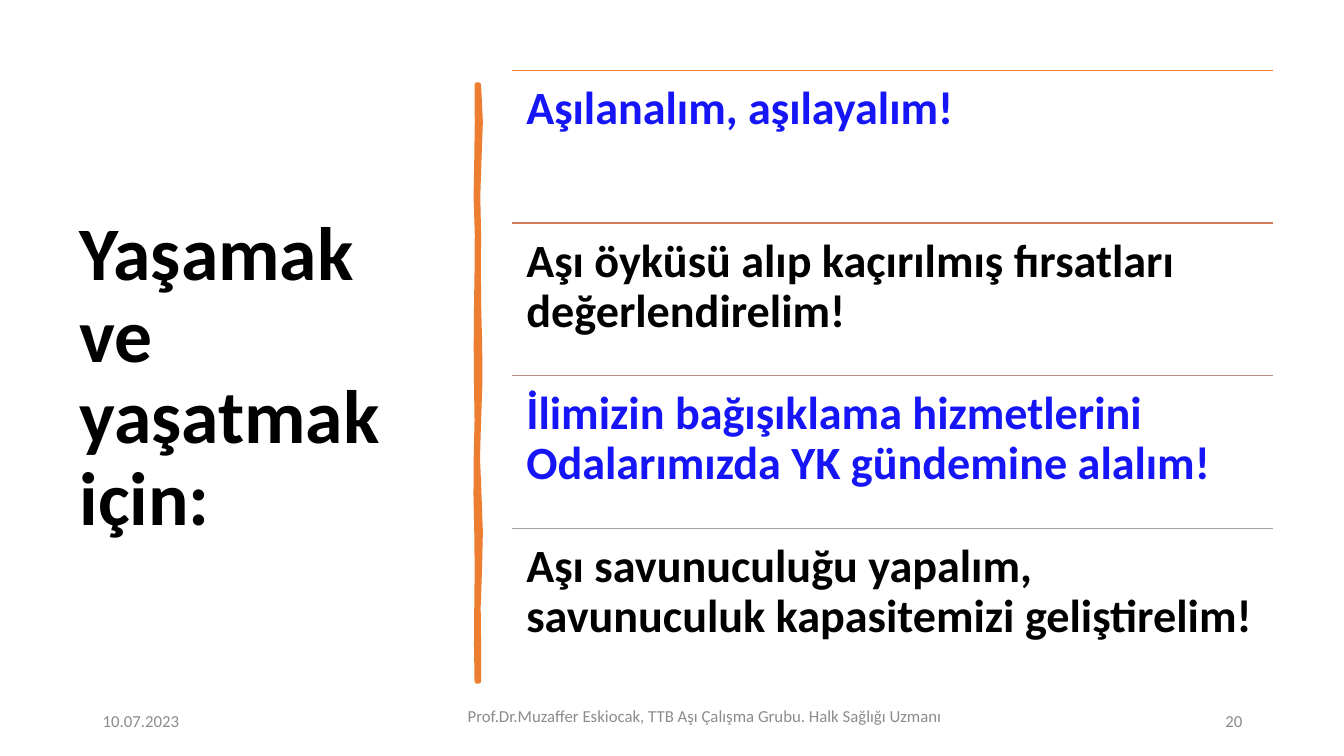
from dataclasses import dataclass

from lxml import etree
from pptx import Presentation
from pptx import util as u
from pptx.dml.color import RGBColor
from pptx.enum import shapes, text
from pptx.oxml import ns

SLIDE_WIDTH = u.Inches(13.33)
SLIDE_HEIGHT = u.Inches(7.5)

BLACK = RGBColor(0x00, 0x00, 0x00)
BLUE = RGBColor(0x15, 0x15, 0xF7)
GRAY = RGBColor(0x8C, 0x8C, 0x8C)
ORANGE = RGBColor(0xED, 0x7D, 0x31)
COPPER = RGBColor(0xD1, 0x7B, 0x5C)
MAUVE = RGBColor(0xB9, 0x8A, 0x82)
SILVER = RGBColor(0xA5, 0xA5, 0xA5)


@dataclass(frozen=True)
class Area:
    """Position and size in percent of the slide."""

    left: float
    top: float
    width: float
    height: float


@dataclass(frozen=True)
class Style:
    size: float
    color: RGBColor
    bold: bool = False
    line_spacing: float = 1.0
    alignment: text.PP_ALIGN = text.PP_ALIGN.LEFT
    anchor: text.MSO_ANCHOR = text.MSO_ANCHOR.MIDDLE
    margin_x: float = 0.1
    margin_y: float = 0.05


@dataclass(frozen=True)
class Label:
    wording: str
    area: Area
    style: Style


@dataclass(frozen=True)
class Advice:
    wording: str
    color: RGBColor
    rule_color: RGBColor


LIST_AREA = Area(38.11, 9.33, 56.64, 80.72)
ADVICE = (
    Advice("Aşılanalım, aşılayalım!", BLUE, ORANGE),
    Advice("Aşı öyküsü alıp kaçırılmış fırsatları değerlendirelim!", BLACK, COPPER),
    Advice("İlimizin bağışıklama hizmetlerini Odalarımızda YK gündemine alalım!", BLUE, MAUVE),
    Advice("Aşı savunuculuğu yapalım, savunuculuk kapasitemizi geliştirelim!", BLACK, SILVER),
)

TITLE = Label(
    "Yaşamak ve yaşatmak için:",
    Area(5.18, 9.33, 28.06, 81.47),
    Style(54, BLACK, bold=True, line_spacing=0.9),
)
FOOTER = (
    Label("10.07.2023", Area(6.9, 92.67, 22.5, 5.33), Style(12, GRAY)),
    Label(
        "Prof.Dr.Muzaffer Eskiocak, TTB Aşı Çalışma Grubu. Halk Sağlığı Uzmanı",
        Area(33.16, 92.67, 38.56, 4),
        Style(12, GRAY, alignment=text.PP_ALIGN.CENTER),
    ),
    Label("20", Area(70.67, 92.67, 22.5, 5.33), Style(12, GRAY, alignment=text.PP_ALIGN.RIGHT)),
)

BRUSH_TOP = 11.2
BRUSH_HEIGHT = 78.93
BRUSH_RIGHT_EDGE = (35.63, 35.76, 35.66, 35.57, 35.63, 35.61, 35.64, 35.71, 35.73,
                    35.63, 35.55, 35.66, 35.76, 35.7, 35.6, 35.63, 35.63)
BRUSH_LEFT_EDGE = (35.48, 35.5, 35.46, 35.41, 35.5, 35.48, 35.44, 35.42, 35.44,
                   35.48, 35.42, 35.4, 35.46, 35.49, 35.46, 35.44, 35.48)


def across(percent: float) -> int:
    return round(SLIDE_WIDTH * percent / 100)


def down(percent: float) -> int:
    return round(SLIDE_HEIGHT * percent / 100)


def set_values(target: object, values: dict) -> None:
    for name, value in values.items():
        setattr(target, name, value)


def add_label(slide, label: Label) -> None:
    area, style = label.area, label.style
    box = slide.shapes.add_textbox(
        across(area.left), down(area.top), across(area.width), down(area.height)
    )
    set_values(box.text_frame, {
        "word_wrap": True,
        "vertical_anchor": style.anchor,
        "margin_left": u.Inches(style.margin_x),
        "margin_right": u.Inches(style.margin_x),
        "margin_top": u.Inches(style.margin_y),
        "margin_bottom": u.Inches(style.margin_y),
    })
    paragraph = box.text_frame.paragraphs[0]
    set_values(paragraph, {
        "alignment": style.alignment,
        "line_spacing": style.line_spacing,
    })
    run = paragraph.add_run()
    run.text = label.wording
    set_values(run.font, {"name": "Calibri", "size": u.Pt(style.size), "bold": style.bold})
    run.font.color.rgb = style.color


def add_rule(slide, area: Area, color: RGBColor) -> None:
    rule = slide.shapes.add_connector(
        shapes.MSO_CONNECTOR.STRAIGHT,
        across(area.left), down(area.top),
        across(area.left + area.width), down(area.top),
    )
    rule.line.color.rgb = color
    rule.line.width = u.Pt(1)
    etree.SubElement(rule._element.spPr, ns.qn("a:effectLst"))


def edge_points(edge: tuple[float, ...]) -> list[tuple[int, int]]:
    step = BRUSH_HEIGHT / (len(edge) - 1)
    return [(across(x), down(BRUSH_TOP + row * step)) for row, x in enumerate(edge)]


def add_brush_stroke(slide) -> None:
    points = edge_points(BRUSH_RIGHT_EDGE) + edge_points(BRUSH_LEFT_EDGE)[::-1]
    builder = slide.shapes.build_freeform(*points[0])
    builder.add_line_segments(points[1:], close=True)
    stroke = builder.convert_to_shape()
    stroke.shadow.inherit = False
    stroke.fill.solid()
    stroke.fill.fore_color.rgb = ORANGE
    stroke.line.color.rgb = ORANGE
    stroke.line.width = u.Pt(3.25)
    etree.SubElement(stroke.line._ln, ns.qn("a:round"))


def add_advice_list(slide) -> None:
    row_height = LIST_AREA.height / len(ADVICE)
    for row, advice in enumerate(ADVICE):
        area = Area(
            LIST_AREA.left, LIST_AREA.top + row * row_height, LIST_AREA.width, row_height
        )
        style = Style(
            33, advice.color, bold=True, line_spacing=0.9,
            anchor=text.MSO_ANCHOR.TOP, margin_x=0.14, margin_y=0.14,
        )
        add_rule(slide, area, advice.rule_color)
        add_label(slide, Label(advice.wording, area, style))


def main() -> None:
    presentation = Presentation()
    set_values(presentation, {"slide_width": SLIDE_WIDTH, "slide_height": SLIDE_HEIGHT})
    slide = presentation.slides.add_slide(presentation.slide_layouts[6])
    add_label(slide, TITLE)
    add_brush_stroke(slide)
    add_advice_list(slide)
    for label in FOOTER:
        add_label(slide, label)
    presentation.save("out.pptx")


if __name__ == "__main__":
    main()
